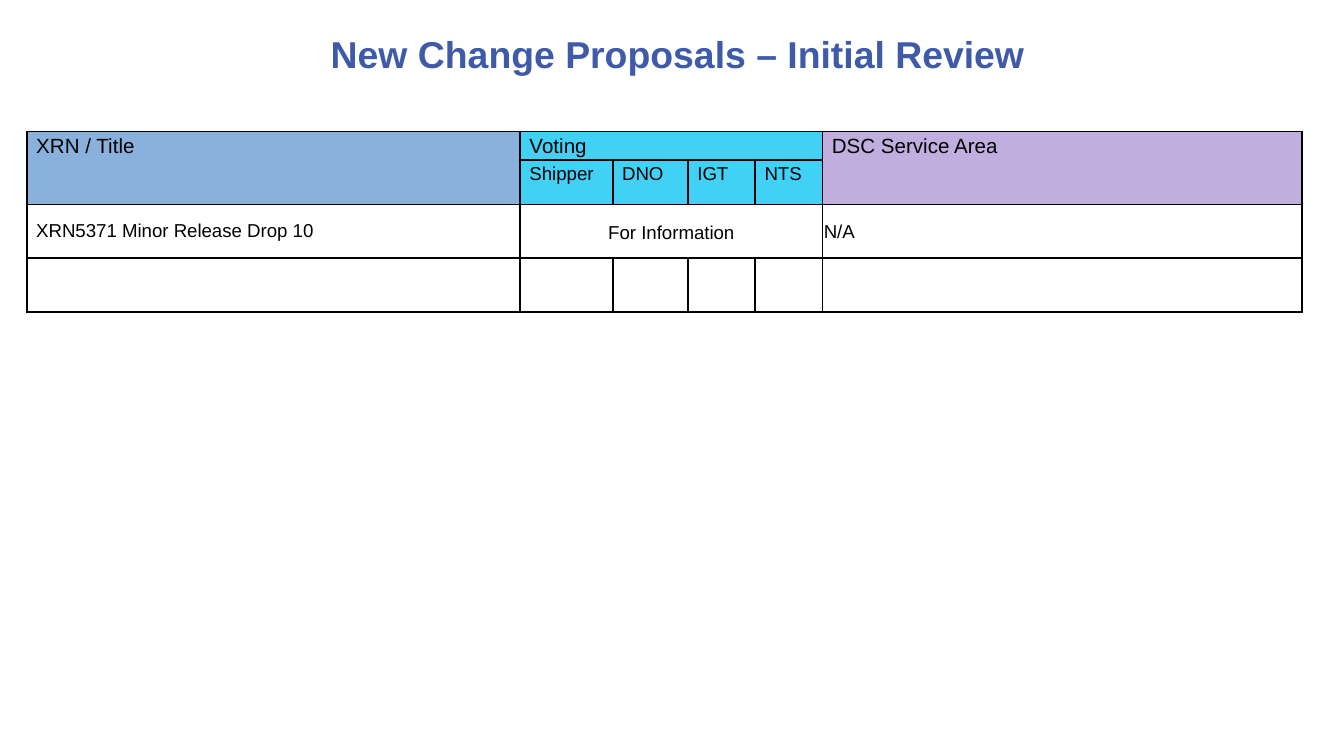
from dataclasses import dataclass

from lxml.etree import SubElement
from pptx import Presentation
from pptx.dml.color import RGBColor as Color
from pptx.enum.text import MSO_ANCHOR as Anchor, PP_ALIGN as Align
from pptx.oxml.ns import qn
from pptx.util import Inches, Pt


@dataclass(frozen=True)
class Theme:
    font: str = "Arial"
    title: str = "3E5AA8"
    text: str = "000000"
    border: str = "000000"
    blue: str = "89B1DC"
    cyan: str = "40D1F5"
    lilac: str = "C0AEDF"
    title_size: int = 20
    heading_size: int = 11
    body_size: int = 10
    border_width: int = 1


THEME = Theme()
TITLE = " New Change Proposals – Initial Review"
HEADINGS = [
    (0, 0, "XRN / Title", THEME.blue),
    (0, 1, "Voting", THEME.cyan),
    (0, 5, "DSC Service Area", THEME.lilac),
]
VOTERS = ["Shipper", "DNO", "IGT", "NTS"]
PROPOSAL = ("XRN5371 Minor Release Drop 10", "For Information", "N/A")
MERGES = [((0, 0), (1, 0)), ((0, 1), (0, 4)), ((0, 5), (1, 5)), ((2, 1), (2, 4))]
COLUMNS = [3.67, 0.69, 0.56, 0.5, 0.5, 3.57]
ROWS = [0, 0.33, 0.4, 0.4]
TABLE_HEIGHT = 1.33
CELL_MARGINS = (0.07, 0, 0.07, 0)


def style(paragraph, size, color, bold=False):
    paragraph.font.name = THEME.font
    paragraph.font.size = Pt(size)
    paragraph.font.bold = bold
    paragraph.font.color.rgb = Color.from_string(color)


def draw_borders(cell):
    properties = cell._tc.get_or_add_tcPr()
    for side in ("lnL", "lnR", "lnT", "lnB"):
        line = SubElement(properties, qn(f"a:{side}"), w=str(Pt(THEME.border_width)))
        fill = SubElement(line, qn("a:solidFill"))
        SubElement(fill, qn("a:srgbClr"), val=THEME.border)


def set_margins(cell, margins):
    cell.margin_left, cell.margin_top, cell.margin_right, cell.margin_bottom = map(Inches, margins)


def write(cell, text, size=THEME.body_size, fill=None, anchor=Anchor.TOP,
          align=Align.LEFT, spacing=1.15, margins=CELL_MARGINS):
    cell.text = text
    cell.vertical_anchor = anchor
    set_margins(cell, margins)
    paragraph = cell.text_frame.paragraphs[0]
    paragraph.alignment = align
    paragraph.line_spacing = spacing
    style(paragraph, size, THEME.text)
    if fill:
        cell.fill.solid()
        cell.fill.fore_color.rgb = Color.from_string(fill)


def add_title(slide):
    box = slide.shapes.add_textbox(Inches(1.06), Inches(0.2), Inches(7.89), Inches(0.39))
    frame = box.text_frame
    frame.word_wrap = True
    frame.vertical_anchor = Anchor.MIDDLE
    paragraph = frame.paragraphs[0]
    paragraph.text = TITLE
    paragraph.alignment = Align.CENTER
    style(paragraph, THEME.title_size, THEME.title, bold=True)


def add_proposals(slide):
    shape = slide.shapes.add_table(
        len(ROWS), len(COLUMNS), Inches(0.2), Inches(0.98),
        Inches(sum(COLUMNS)), Inches(TABLE_HEIGHT))
    table = shape.table
    table.first_row = table.horz_banding = False
    for column, width in zip(table.columns, COLUMNS):
        column.width = Inches(width)
    for row, height in zip(table.rows, ROWS):
        row.height = Inches(height)
    shape.height = Inches(TABLE_HEIGHT)
    for cell in table.iter_cells():
        draw_borders(cell)
        cell.fill.background()
        set_margins(cell, CELL_MARGINS)
        style(cell.text_frame.paragraphs[0], THEME.body_size, THEME.text)
    for first, last in MERGES:
        table.cell(*first).merge(table.cell(*last))

    for row, column, text, fill in HEADINGS:
        write(table.cell(row, column), text, THEME.heading_size, fill)
    for column, voter in enumerate(VOTERS, 1):
        write(table.cell(1, column), voter, fill=THEME.cyan)
    title, voting, area = PROPOSAL
    write(table.cell(2, 0), title, anchor=Anchor.MIDDLE, spacing=1.0)
    write(table.cell(2, 1), voting, anchor=Anchor.MIDDLE, align=Align.CENTER)
    write(table.cell(2, 5), area, anchor=Anchor.MIDDLE, spacing=1.0,
          margins=(0.01, 0.01, 0.01, 0))


def main():
    presentation = Presentation()
    presentation.slide_width = Inches(10)
    presentation.slide_height = presentation.slide_width * 9 // 16
    slide = presentation.slides.add_slide(presentation.slide_layouts[6])
    add_title(slide)
    add_proposals(slide)
    presentation.save("out.pptx")


if __name__ == "__main__":
    main()
